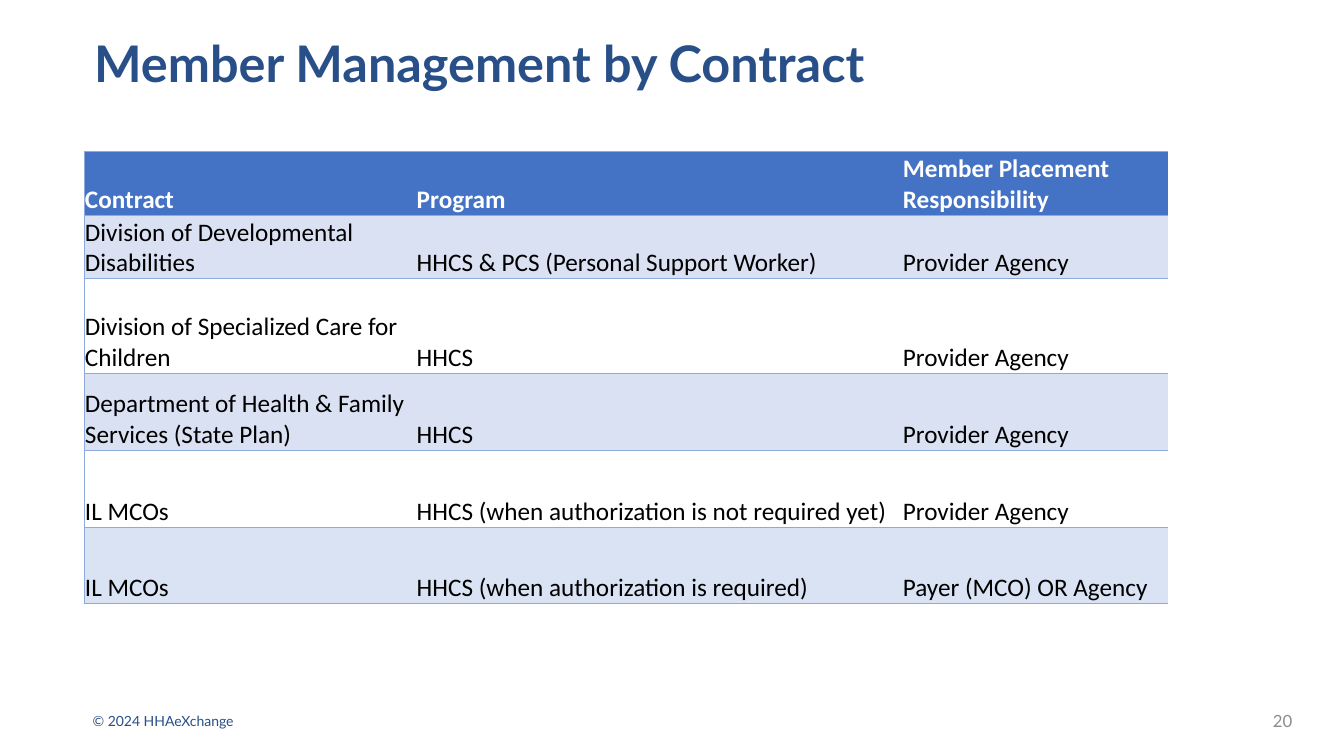
from dataclasses import dataclass

from lxml.etree import SubElement
from pptx import Presentation
from pptx.dml.color import RGBColor
from pptx.enum.text import MSO_ANCHOR as Anchor, MSO_AUTO_SIZE as AutoSize, PP_ALIGN as Align
from pptx.oxml.ns import qn
from pptx.util import Pt


@dataclass(frozen=True)
class Theme:
    heading_font: str = "Lato"
    table_font: str = "Calibri"
    navy: str = "284F88"
    gray: str = "8C8C8C"
    black: str = "000000"
    white: str = "FFFFFF"
    header_fill: str = "4472C4"
    band_fill: str = "D9E1F2"
    last_fill: str = "DAE3F3"
    border: str = "8EA9DB"
    title_size: float = 36
    table_size: float = 18
    number_size: float = 12
    copyright_size: float = 10


THEME = Theme()

HEADER = ("Contract", "Program", "Member Placement Responsibility")
CONTRACTS = (
    ("Division of Developmental Disabilities", "HHCS & PCS (Personal Support Worker)", "Provider Agency"),
    ("Division of Specialized Care for Children", "HHCS", "Provider Agency"),
    ("Department of Health & Family Services (State Plan)", "HHCS", "Provider Agency"),
    ("IL MCOs", "HHCS (when authorization is not required yet)", "Provider Agency"),
    ("IL MCOs", "HHCS (when authorization is required)", "Payer (MCO) OR Agency"),
)
ROW_FILLS = (THEME.header_fill, THEME.band_fill, None, THEME.band_fill, None, THEME.last_fill)
COLUMN_WIDTHS = (237, 347.3, 189.7)
ROW_HEIGHTS = (45.5, 45.5, 67.8, 54.8, 54.8, 54.8)


def write_text(frame, text, *, size, color, font=THEME.heading_font, bold=False,
               align=Align.LEFT, line_spacing=None):
    paragraph = frame.paragraphs[0]
    paragraph.alignment = align
    paragraph.line_spacing = line_spacing
    run = paragraph.add_run()
    run.text = text
    run.font.name = font
    run.font.size = Pt(size)
    run.font.bold = bold
    run.font.color.rgb = RGBColor.from_string(color)


def place(shape, box):
    shape.left, shape.top, shape.width, shape.height = (Pt(length) for length in box)


def set_borders(cell, visible_sides):
    properties = cell._tc.get_or_add_tcPr()
    for side in "LRTB":
        line = SubElement(properties, qn(f"a:ln{side}"), w=str(Pt(0.5)))
        if side in visible_sides:
            fill = SubElement(line, qn("a:solidFill"))
            SubElement(fill, qn("a:srgbClr"), val=THEME.border)
        else:
            SubElement(line, qn("a:noFill"))


# Title
def add_title(slide, box):
    title = slide.shapes.title
    place(title, box)
    frame = title.text_frame
    frame.word_wrap = True
    frame.auto_size = AutoSize.NONE
    frame.vertical_anchor = Anchor.MIDDLE
    write_text(frame, "Member Management by Contract", size=THEME.title_size,
               color=THEME.navy, bold=True, line_spacing=0.9)


# Contract table
def add_contract_table(slide, box):
    rows = (HEADER, *CONTRACTS)
    table = slide.shapes.add_table(len(rows), len(HEADER), *(Pt(length) for length in box)).table
    table.horz_banding = False
    for column, width in zip(table.columns, COLUMN_WIDTHS):
        column.width = Pt(width)
    for row, height in zip(table.rows, ROW_HEIGHTS):
        row.height = Pt(height)
    for row_index, (texts, fill) in enumerate(zip(rows, ROW_FILLS)):
        is_header = row_index == 0
        for column_index, text in enumerate(texts):
            cell = table.cell(row_index, column_index)
            cell.margin_left = cell.margin_right = cell.margin_top = Pt(0.7)
            cell.margin_bottom = Pt(0)
            cell.vertical_anchor = Anchor.BOTTOM
            set_borders(cell, "LTB" if column_index == 0 else "TB")
            if fill:
                cell.fill.solid()
                cell.fill.fore_color.rgb = RGBColor.from_string(fill)
            else:
                cell.fill.background()
            write_text(cell.text_frame, text, size=THEME.table_size, font=THEME.table_font,
                       color=THEME.white if is_header else THEME.black, bold=is_header)


# Footer: copyright line and slide number
def add_footer(slide, box):
    left, top, width, height = box
    copyright_box = slide.shapes.add_textbox(Pt(left), Pt(top + 8.6), Pt(124.6), Pt(12.2))
    frame = copyright_box.text_frame
    frame.margin_left = frame.margin_right = frame.margin_top = frame.margin_bottom = 0
    frame.word_wrap = True
    write_text(frame, "© 2024 HHAeXchange", size=THEME.copyright_size, color=THEME.navy)

    number_box = slide.shapes.add_textbox(Pt(left + width - 216), Pt(top), Pt(216), Pt(height))
    frame = number_box.text_frame
    frame.word_wrap = True
    frame.vertical_anchor = Anchor.MIDDLE
    write_text(frame, "20", size=THEME.number_size, color=THEME.gray, align=Align.RIGHT)


def main():
    presentation = Presentation()
    presentation.slide_width, presentation.slide_height = Pt(960), Pt(540)
    slide = presentation.slides.add_slide(presentation.slide_layouts[5])
    add_title(slide, (60, 26, 808, 42.5))
    add_contract_table(slide, (60, 108, sum(COLUMN_WIDTHS), sum(ROW_HEIGHTS)))
    add_footer(slide, (66.2, 500.4, 864, 28.8))
    presentation.save("out.pptx")


if __name__ == "__main__":
    main()
